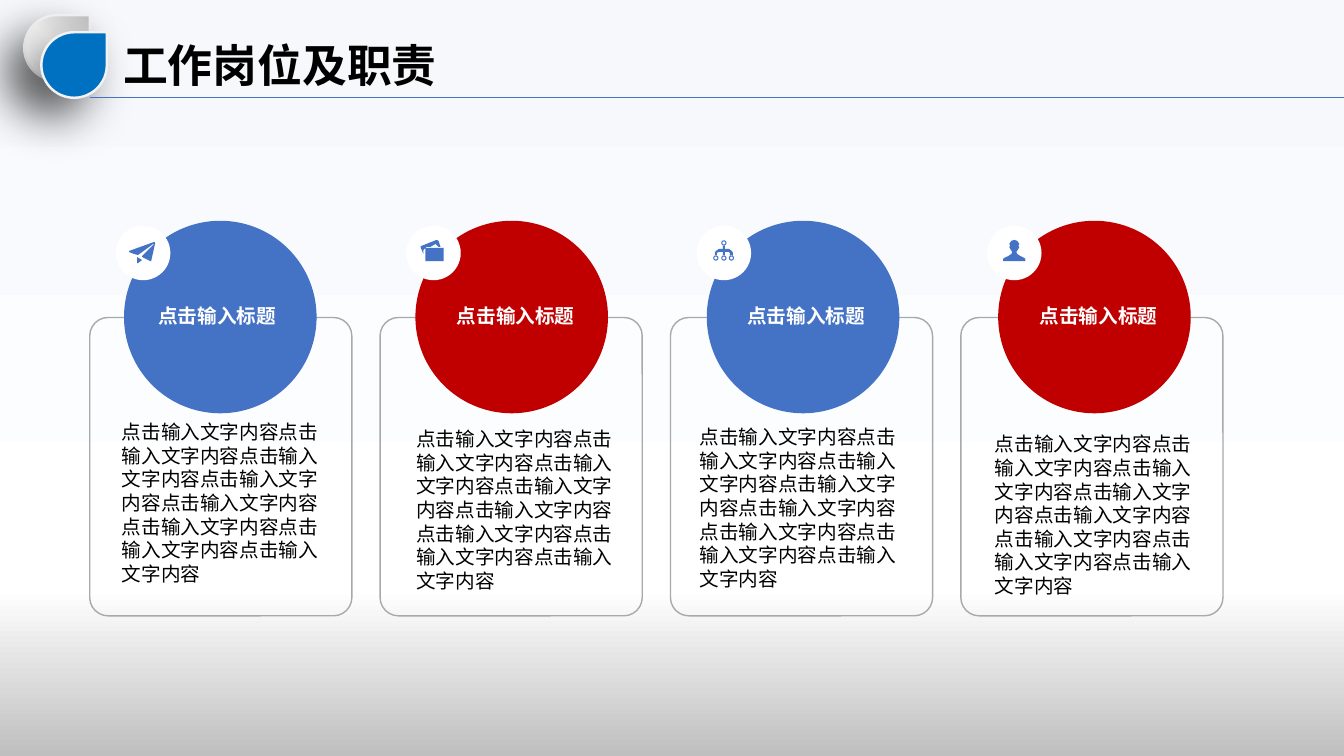
from dataclasses import dataclass
from math import cos, pi, sin

from lxml import etree
from pptx import Presentation
from pptx.dml.color import RGBColor
from pptx.enum.shapes import MSO_CONNECTOR, MSO_SHAPE
from pptx.enum.text import MSO_ANCHOR, MSO_AUTO_SIZE, PP_ALIGN
from pptx.oxml.ns import qn
from pptx.util import Inches, Pt

TEARDROP, ROUNDED, OVAL = MSO_SHAPE.TEAR, MSO_SHAPE.ROUNDED_RECTANGLE, MSO_SHAPE.OVAL
LEFT, CENTER = PP_ALIGN.LEFT, PP_ALIGN.CENTER
TOP, MIDDLE = MSO_ANCHOR.TOP, MSO_ANCHOR.MIDDLE


@dataclass(frozen=True)
class Theme:
    font: str = "Noto Sans CJK SC"
    title_size: int = 32
    text_size: int = 14
    black: str = "000000"
    white: str = "FFFFFF"
    blue: str = "4472C4"
    red: str = "C00000"
    drop: str = "0070C0"
    drop_edge: str = "F2F2F2"
    card_edge: str = "A6AAA9"
    backdrop: tuple = ((0, "F6F8FC"), (78, "FFFFFF"), (100, "BFBFBF"))
    silver: tuple = ((0, "FFFFFF"), (50, "F2F2F2"), (100, "BFBFBF"))


theme = Theme()


def write(frame, text, size=theme.text_size, color=theme.black, bold=False,
          align=LEFT, anchor=TOP, inset=(0.1, 0.05), spacing=1.0, before=0):
    frame.word_wrap = True
    frame.auto_size = MSO_AUTO_SIZE.NONE
    frame.vertical_anchor = anchor
    frame.margin_left = frame.margin_right = Inches(inset[0])
    frame.margin_top = frame.margin_bottom = Inches(inset[1])
    para = frame.paragraphs[0]
    para.alignment = align
    para.line_spacing = spacing
    para.space_before = Pt(before)
    span = para.add_run()
    span.text = text
    span.font.name = theme.font
    span.font.size = Pt(size)
    span.font.bold = bold
    span.font.color.rgb = RGBColor.from_string(color)


def add_block(kind, box, fill=None, edge=None, weight=1):
    block = slide.shapes.add_shape(kind, *map(Inches, box))
    block.shadow.inherit = False
    if fill:
        block.fill.solid()
        block.fill.fore_color.rgb = RGBColor.from_string(fill)
    else:
        block.fill.background()
    if edge:
        block.line.color.rgb = RGBColor.from_string(edge)
        block.line.width = Pt(weight)
    else:
        block.line.fill.background()
    return block


deck = Presentation()
deck.slide_width, deck.slide_height = Inches(13.33), Inches(7.5)
slide = deck.slides.add_slide(deck.slide_layouts[5])
slide.background.fill.gradient()

drops = [add_block(TEARDROP, (start, start - 0.09, 0.65, 0.65), theme.drop,
                   theme.drop_edge, 1.75) for start in (0.24, 0.41)]
drops[0].fill.gradient()
for drop in drops:
    effects = drop.element.spPr.find(qn("a:effectLst"))
    shadow = etree.SubElement(effects, qn("a:outerShdw"), blurRad=str(Pt(35)),
                              dist=str(Pt(20)), dir="8100000", algn="tr", rotWithShape="0")
    tint = etree.SubElement(shadow, qn("a:srgbClr"), val=theme.black)
    etree.SubElement(tint, qn("a:alpha"), val="50000")

for holder, stops, angle in ((slide, theme.backdrop, 90), (drops[0], theme.silver, 315)):
    gradient = holder.element.find(".//" + qn("a:gradFill"))
    for child in list(gradient):
        gradient.remove(child)
    stop_list = etree.SubElement(gradient, qn("a:gsLst"))
    for place, color in stops:
        stop = etree.SubElement(stop_list, qn("a:gs"), pos=str(place * 1000))
        etree.SubElement(stop, qn("a:srgbClr"), val=color)
    etree.SubElement(gradient, qn("a:lin"), ang=str(angle * 60000), scaled="0")

rule = slide.shapes.add_connector(MSO_CONNECTOR.STRAIGHT, Inches(0.89), Inches(0.97),
                                  deck.slide_width, Inches(0.97))
rule.line.color.rgb = RGBColor.from_string(theme.blue)
rule.line.width = Pt(0.5)
etree.SubElement(rule.element.spPr, qn("a:effectLst"))

title = slide.shapes.title
title.left, title.top, title.width, title.height = map(Inches, (1.12, 0.32, 4.2, 0.64))
write(title.text_frame, "工作岗位及职责", size=theme.title_size, bold=True)

plane = [
    [(21, 37), (22, 37), (26, 34), (21, 31)],
    [(38, 16), (13, 25), (13, 26), (18, 28), (22, 29), (37, 18), (38, 18), (26, 30),
     (26, 31), (34, 35), (35, 35), (39, 17)],
]
photos = [
    [(34, 21), (32, 15), (30, 14), (15, 20), (14, 21), (17, 28), (17, 24), (20, 21),
     (24, 21), (29, 18), (32, 21)],
    [(19, 22), (37, 22), (37, 35), (19, 35)],
]
branches = [(26, 19), (28, 19), (28, 23), (32, 23), (35, 25), (36, 27), (36, 30), (33, 30),
            (33, 27), (32, 26), (28, 26), (28, 30), (26, 30), (26, 26), (22, 26), (20, 27),
            (20, 30), (18, 30), (18, 27), (19, 25), (22, 23), (26, 23)]
rings = [[(x + radius * cos(step * pi / 8), y + radius * sin(step * pi / 8))
          for step in range(16)]
         for x, y in ((27, 17), (19, 32), (27, 32), (34.5, 32)) for radius in (2.6, 1.5)]
half = [(27, 14), (30, 15), (32, 18), (31, 20), (32, 21), (31, 23), (29, 26), (30, 28),
        (33, 30), (37, 32), (38, 33), (38, 35)]
person = [half + [(54 - x, y) for x, y in reversed(half)]]

columns = [
    (plane, theme.blue, 1.26, 1.11, 4.12),
    (photos, theme.red, 4.22, 4.03, 4.19),
    ([branches] + rings, theme.blue, 7.1, 6.84, 4.17),
    (person, theme.red, 10, 9.77, 4.24),
]
for index, (icon, color, label_left, body_left, body_top) in enumerate(columns):
    card = add_block(ROUNDED, (0.89 + 2.88 * index, 3.15, 2.6, 2.96), edge=theme.card_edge)
    card.adjustments[0] = 0.07
    add_block(OVAL, (1.23 + 2.89 * index, 2.19, 1.91, 1.91), color)
    badge = add_block(OVAL, (1.15 + 2.88 * index, 2.24, 0.54, 0.54), theme.white)

    outline = [[(x * 10, y * 10) for x, y in contour] for contour in icon]
    builder = slide.shapes.build_freeform(*outline[0][0], scale=Inches(0.001))
    builder.add_line_segments(outline[0][1:], close=True)
    for contour in outline[1:]:
        builder.move_to(*contour[0])
        builder.add_line_segments(contour[1:], close=True)
    symbol = builder.convert_to_shape(badge.left, badge.top)
    symbol.shadow.inherit = False
    symbol.fill.solid()
    symbol.fill.fore_color.rgb = RGBColor.from_string(theme.blue)
    symbol.line.fill.background()

    label = slide.shapes.add_textbox(*map(Inches, (label_left, 2.82, 1.79, 0.66)))
    write(label.text_frame, "点击输入标题", color=theme.white, bold=True, align=CENTER,
          anchor=MIDDLE, inset=(0, 0), spacing=0.9, before=10)
    body = slide.shapes.add_textbox(*map(Inches, (body_left, body_top, 2.17, 1.75)))
    write(body.text_frame, "点击输入文字内容" * 8)

for latin in list(slide.element.iter(qn("a:latin"))):
    east_asian = etree.Element(qn("a:ea"), typeface=theme.font)
    latin.addnext(east_asian)

deck.save("out.pptx")
